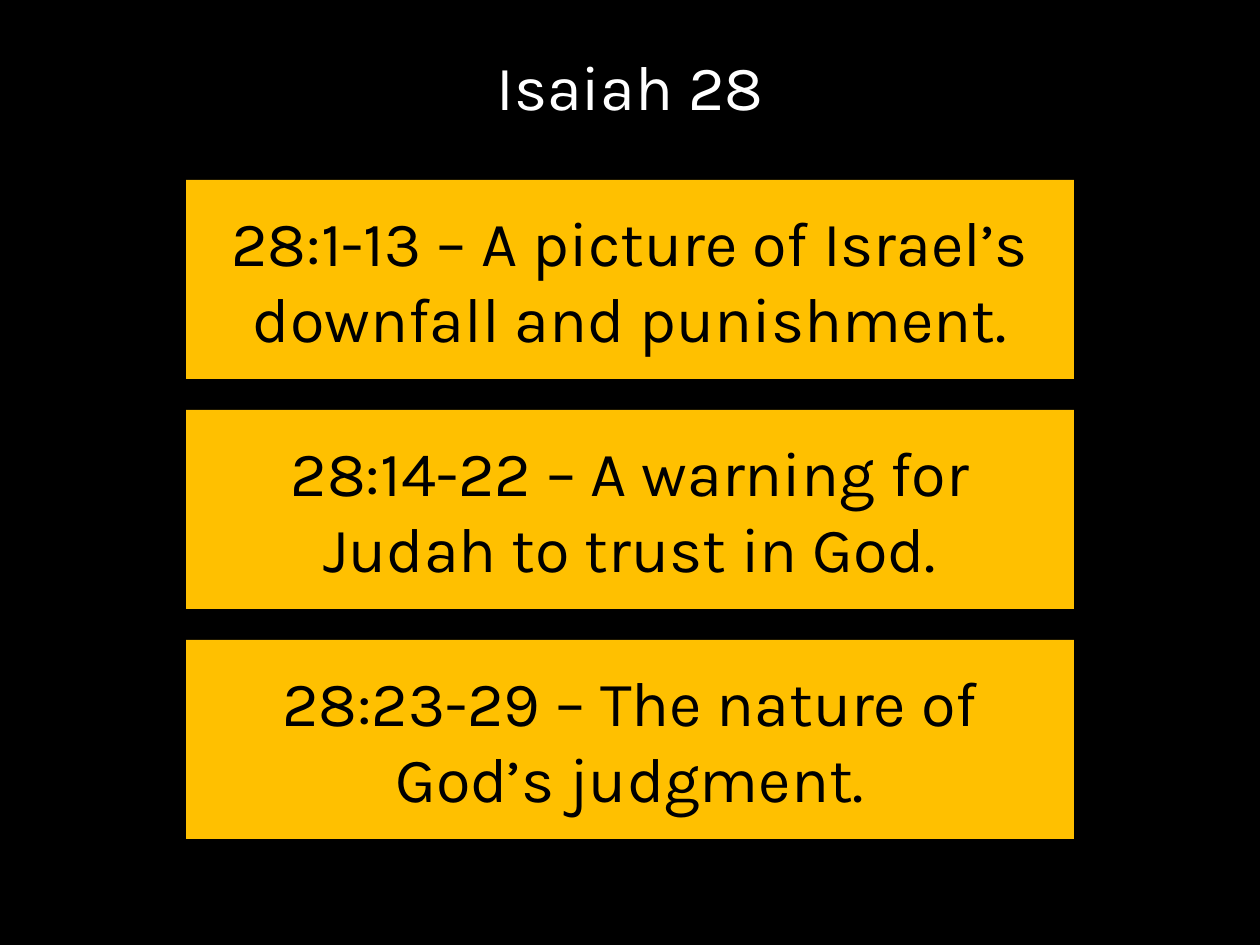
"""Build the Isaiah 28 outline slide."""
import pptx
import pptx.util
import pptx.dml.color
import pptx.enum.shapes
import pptx.enum.text

PX = 914400 / 126
FONT = "Karla"
SECTIONS = [
    "28:1-13 – A picture of Israel’s downfall and punishment.",
    "28:14-22 – A warning for Judah to trust in God.",
    "28:23-29 – The nature of God’s judgment.",
]


def px(n):
    """Turn pixels into EMU."""
    return pptx.util.Emu(round(n * PX))


def color(value):
    """Turn a hex string into a colour."""
    return pptx.dml.color.RGBColor.from_string(value)


def set_text(sp, text, hex_color, anchor):
    """Write one centred 36 pt paragraph into a shape."""
    tf = sp.text_frame
    tf.text = text
    tf.word_wrap = True
    tf.auto_size = pptx.enum.text.MSO_AUTO_SIZE.NONE
    tf.vertical_anchor = anchor
    p = tf.paragraphs[0]
    p.alignment = pptx.enum.text.PP_ALIGN.CENTER
    r = p.runs[0]
    r.font.name = FONT
    r.font.size = pptx.util.Pt(36)
    r.font.color.rgb = color(hex_color)
    return p


def add_title(s, text):
    """Place and format the title placeholder."""
    sp = s.shapes.title
    sp.left, sp.top, sp.width, sp.height = map(px, (87, 50, 1086, 98))
    p = set_text(sp, text, "FFFFFF", pptx.enum.text.MSO_ANCHOR.TOP)
    p.line_spacing = 0.9


def add_section(s, top, text):
    """Add one gold section box."""
    sp = s.shapes.add_shape(
        pptx.enum.shapes.MSO_SHAPE.RECTANGLE, px(186), px(top), px(888), px(199)
    )
    sp.shadow.inherit = False
    sp.fill.solid()
    sp.fill.fore_color.rgb = color("FFC000")
    sp.line.fill.background()
    set_text(sp, text, "000000", pptx.enum.text.MSO_ANCHOR.MIDDLE)


def main():
    """Build and save the slide."""
    prs = pptx.Presentation()
    prs.slide_width, prs.slide_height = px(1260), px(945)
    s = prs.slides.add_slide(prs.slide_layouts[5])
    s.background.fill.solid()
    s.background.fill.fore_color.rgb = color("000000")
    add_title(s, "Isaiah 28")
    for i, text in enumerate(SECTIONS):
        add_section(s, 180 + i * 230, text)
    prs.save("out.pptx")


if __name__ == "__main__":
    main()
